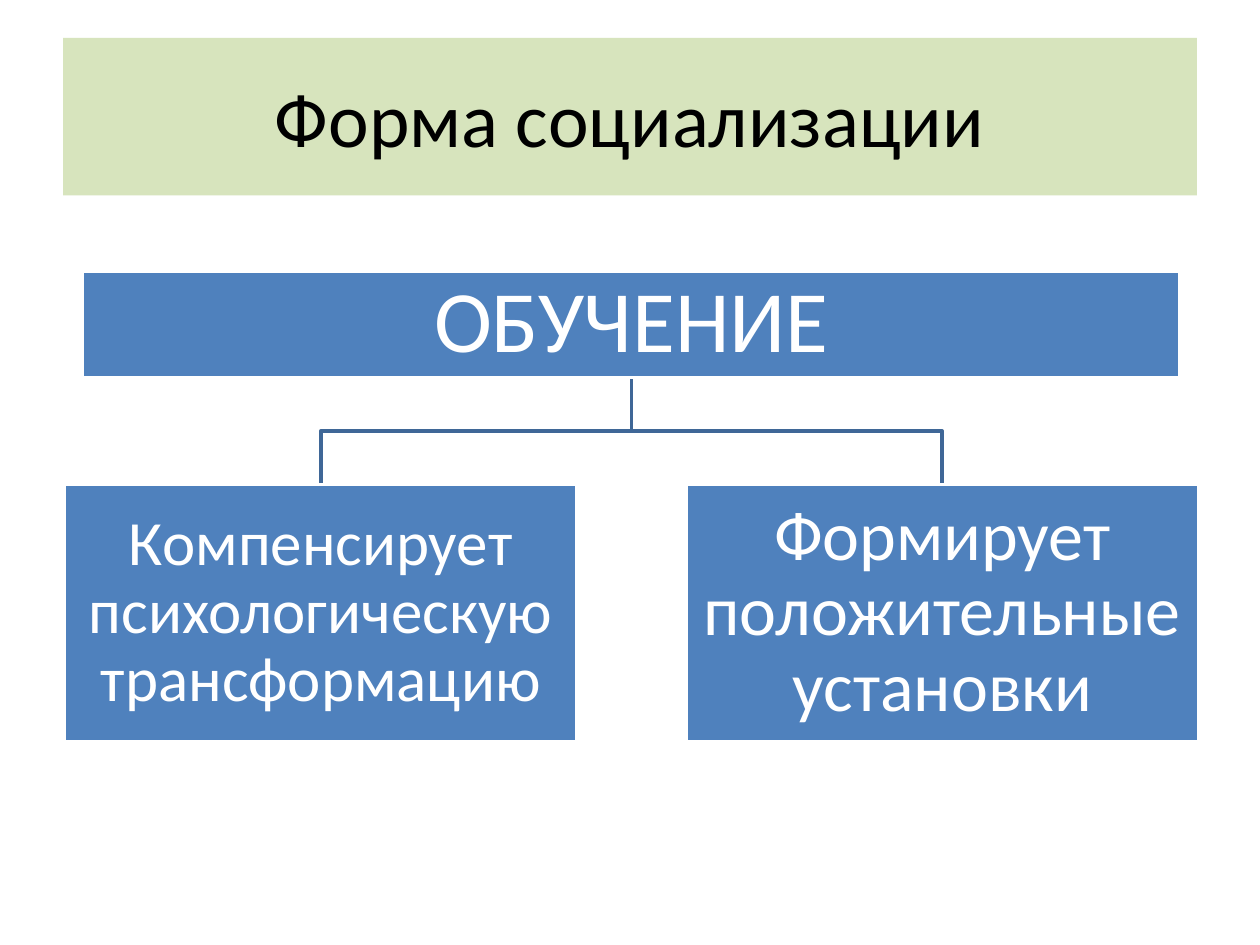
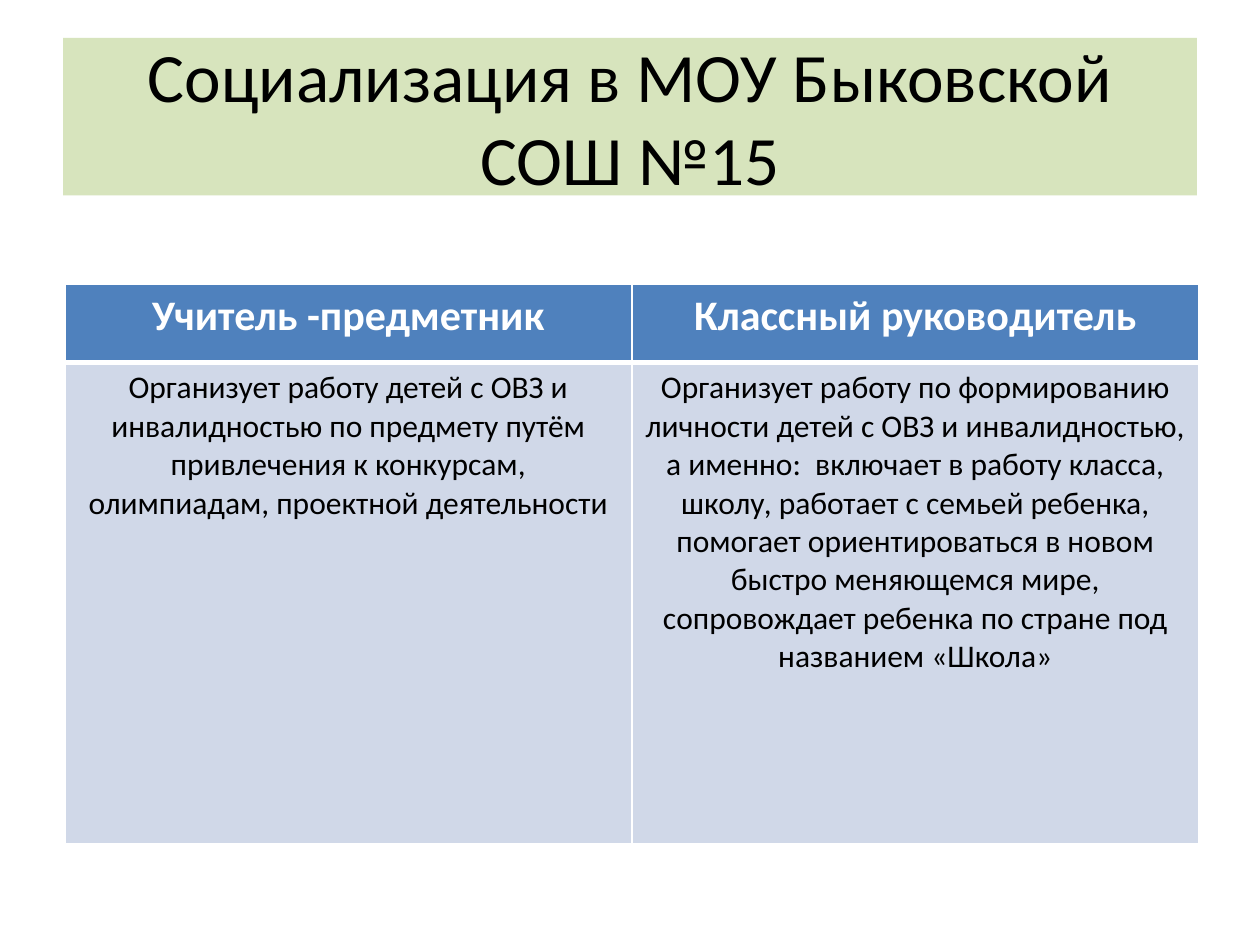
from collections import namedtuple

from lxml import etree
from pptx import Presentation
from pptx.dml.color import RGBColor
from pptx.enum.shapes import MSO_SHAPE
from pptx.enum.text import MSO_ANCHOR, MSO_AUTO_SIZE, PP_ALIGN
from pptx.oxml.ns import qn
from pptx.util import Inches, Pt

Box = namedtuple("Box", "left top width height")

FONT = "Calibri"
BLACK = RGBColor(0x00, 0x00, 0x00)
WHITE = RGBColor(0xFF, 0xFF, 0xFF)
PALE_GREEN = RGBColor(0xD7, 0xE4, 0xBD)
BLUE = RGBColor(0x4F, 0x81, 0xBD)
DARK_BLUE = RGBColor(0x3F, 0x67, 0x97)
PALE_BLUE = RGBColor(0xD0, 0xD8, 0xE8)

CENTER = PP_ALIGN.CENTER
MIDDLE = MSO_ANCHOR.MIDDLE
NO_AUTOFIT = MSO_AUTO_SIZE.NONE
RECTANGLE = MSO_SHAPE.RECTANGLE

TITLE_ONLY = 5
SLIDE_WIDTH, SLIDE_HEIGHT = Inches(10), Inches(7.5)


def share(left, top, width, height):
    """Return a box given as percentages of the slide's size."""
    return Box(int(SLIDE_WIDTH * left / 100), int(SLIDE_HEIGHT * top / 100),
               int(SLIDE_WIDTH * width / 100), int(SLIDE_HEIGHT * height / 100))


TITLE_BAND = share(5, 4, 90, 16.67)
DIAGRAM_AREA = share(5.12, 28.74, 90, 49.77)
TABLE_AREA = share(5.14, 30.07, 90, 59.2)


def write(text_frame, text, size, color, bold=False):
    text_frame.text = text
    paragraph = text_frame.paragraphs[0]
    paragraph.alignment = CENTER
    font = paragraph.font
    font.name, font.size, font.bold = FONT, Pt(size), bold
    font.color.rgb = color
    return paragraph


def add_titled_slide(presentation, text, size):
    slide = presentation.slides.add_slide(presentation.slide_layouts[TITLE_ONLY])
    title = slide.shapes.title
    title.left, title.top, title.width, title.height = TITLE_BAND
    title.fill.solid()
    title.fill.fore_color.rgb = PALE_GREEN
    write(title.text_frame, text, size, BLACK)
    title.text_frame.vertical_anchor = MIDDLE
    title.text_frame.auto_size = NO_AUTOFIT
    return slide


def add_node(slide, box, text, size):
    node = slide.shapes.add_shape(RECTANGLE, *box)
    node.shadow.inherit = False
    node.fill.solid()
    node.fill.fore_color.rgb = BLUE
    node.line.color.rgb = WHITE
    node.line.width = Pt(2)
    frame = node.text_frame
    frame.word_wrap = True
    frame.vertical_anchor = MIDDLE
    frame.margin_left = frame.margin_right = Inches(0.03)
    frame.margin_top = frame.margin_bottom = Inches(0.03)
    write(frame, text, size, WHITE).line_spacing = 0.9


def add_branch(slide, parent, child):
    """Draw a stepped line from the parent's bottom to the child's top."""
    start_x, start_y = parent.left + parent.width // 2, parent.top + parent.height
    end_x, end_y = child.left + child.width // 2, child.top
    bend_y = (start_y + end_y) // 2
    builder = slide.shapes.build_freeform(start_x, start_y)
    builder.add_line_segments(
        [(start_x, bend_y), (end_x, bend_y), (end_x, end_y)], close=False)
    branch = builder.convert_to_shape()
    branch.shadow.inherit = False
    branch.fill.background()
    branch.line.color.rgb = DARK_BLUE
    branch.line.width = Pt(2)


def add_hierarchy(slide, box, parent, children):
    """Draw a parent over equally spaced children, joined by stepped lines."""
    parent_width = int(box.width * 0.968)
    child_width = int(box.width * 0.452)
    child_height = int(box.height * 0.547)
    child_top = box.top + box.height - child_height
    step = (box.width - child_width) // (len(children) - 1)

    parent_box = Box(box.left + (box.width - parent_width) // 2, box.top,
                     parent_width, int(box.height * 0.225))
    child_boxes = [Box(box.left + index * step, child_top, child_width, child_height)
                   for index in range(len(children))]

    for child_box in reversed(child_boxes):
        add_branch(slide, parent_box, child_box)
    add_node(slide, parent_box, *parent)
    for child_box, child in zip(child_boxes, children):
        add_node(slide, child_box, *child)


def set_borders(cell, **widths):
    """Give the cell white borders; widths in points are keyed L, R, T, B."""
    properties = cell._tc.get_or_add_tcPr()
    for side in "LRTB":
        border = etree.SubElement(properties, qn(f"a:ln{side}"),
                                  w=str(Pt(widths.get(side, 1))))
        fill = etree.SubElement(border, qn("a:solidFill"))
        etree.SubElement(fill, qn("a:srgbClr"), val=str(WHITE))


def add_roles_table(slide, box, roles):
    """Draw one column per role: its name above its duties."""
    table = slide.shapes.add_table(2, len(roles), *box).table
    table.rows[0].height = int(box.height * 0.14)
    table.rows[1].height = box.height - table.rows[0].height
    for column, (name, duties) in enumerate(roles):
        header, body = table.cell(0, column), table.cell(1, column)
        set_borders(header, B=3)
        set_borders(body, T=3)
        for cell, color in ((header, BLUE), (body, PALE_BLUE)):
            cell.fill.solid()
            cell.fill.fore_color.rgb = color
        write(header.text_frame, name, 24, WHITE, bold=True)
        write(body.text_frame, duties, 18, BLACK)


def main():
    presentation = Presentation()
    presentation.slide_width = SLIDE_WIDTH
    presentation.slide_height = SLIDE_HEIGHT

    form_slide = add_titled_slide(presentation, "Форма социализации", 44)
    add_hierarchy(form_slide, DIAGRAM_AREA, ("ОБУЧЕНИЕ", 50), [
        ("Компенсирует психологическую трансформацию", 36),
        ("Формирует положительные установки", 40),
    ])

    school_slide = add_titled_slide(
        presentation, "Социализация в МОУ Быковской СОШ №15", 39.6)
    add_roles_table(school_slide, TABLE_AREA, [
        ("Учитель -предметник",
         "Организует работу детей с ОВЗ и инвалидностью по предмету путём "
         "привлечения к конкурсам, олимпиадам, проектной деятельности"),
        ("Классный руководитель",
         "Организует работу по формированию личности детей с ОВЗ и "
         "инвалидностью, а именно:  включает в работу класса, школу, "
         "работает с семьей ребенка, помогает ориентироваться в новом "
         "быстро меняющемся мире, сопровождает ребенка по стране под "
         "названием «Школа»"),
    ])

    presentation.save("out.pptx")


if __name__ == "__main__":
    main()
